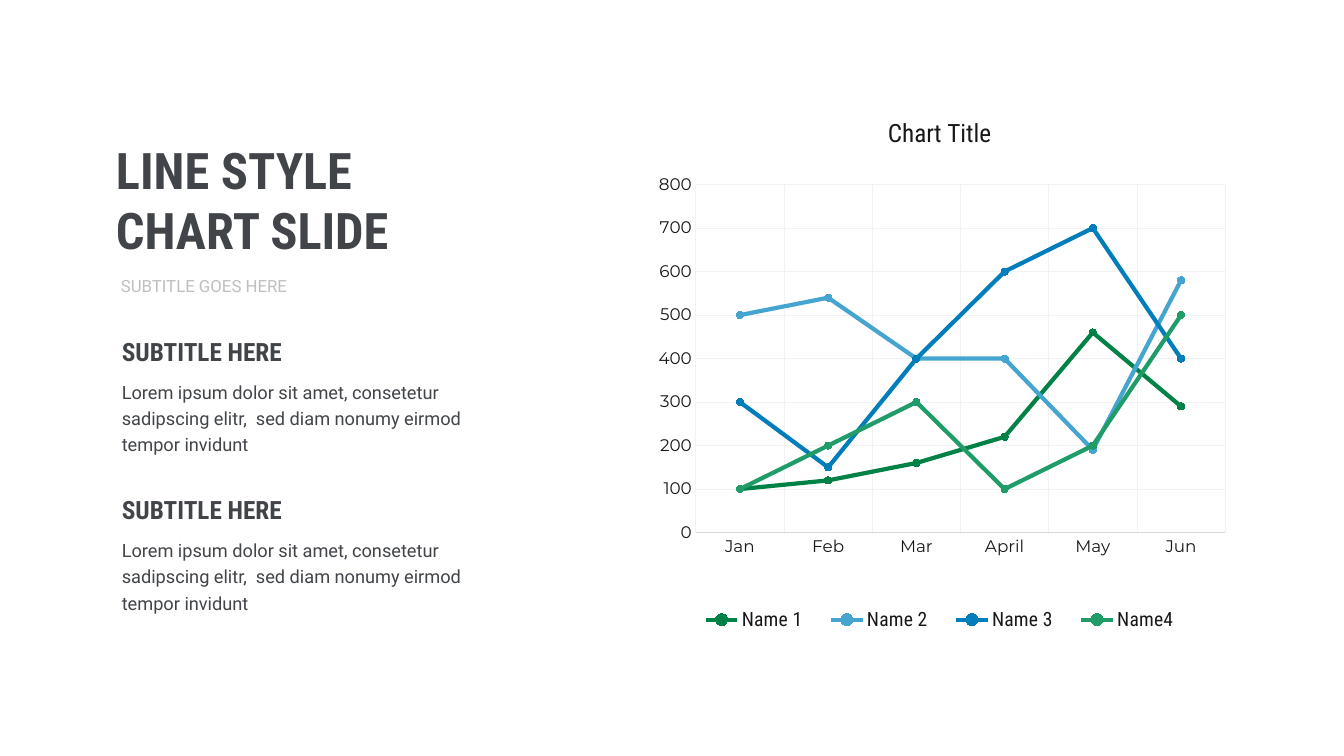
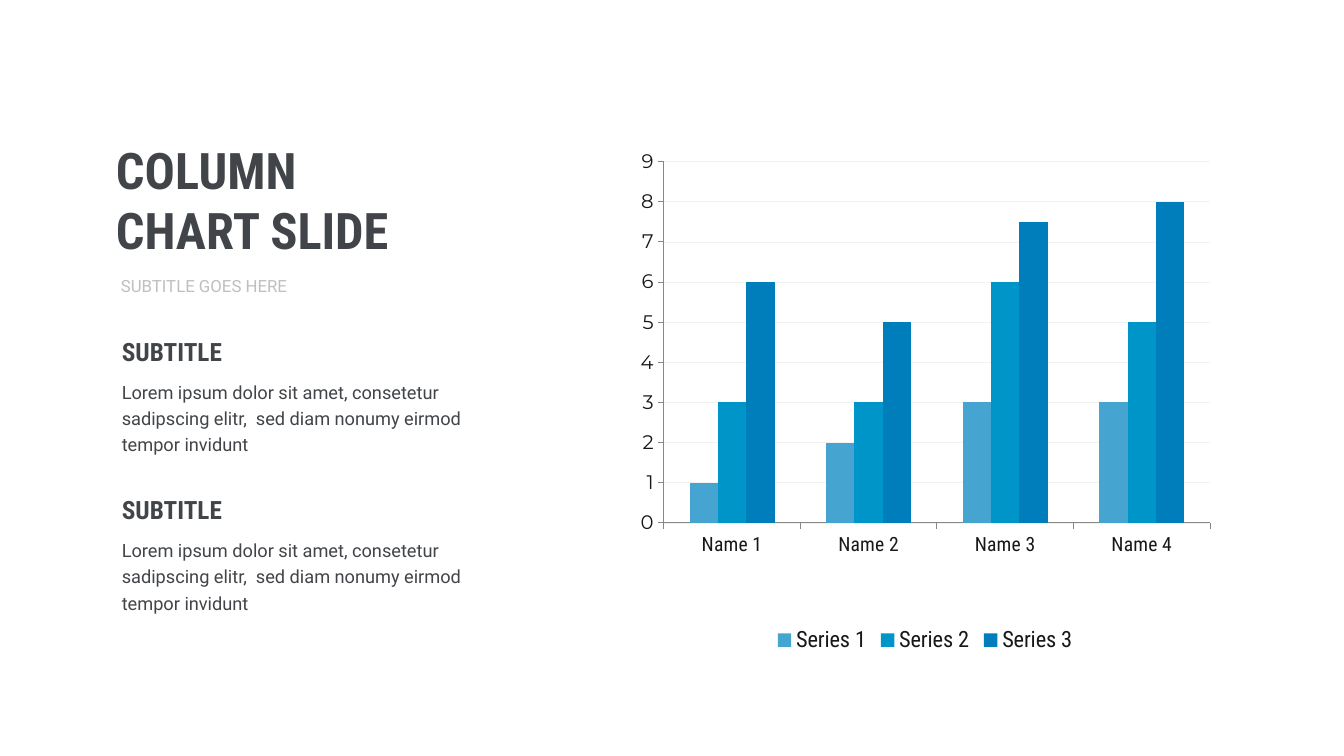
import pptx
import pptx.util
import pptx.chart.data
import pptx.dml.color
import pptx.enum.chart
import pptx.enum.text
import pptx.oxml
import pptx.oxml.ns

Inches = pptx.util.Inches
Pt = pptx.util.Pt
RGBColor = pptx.dml.color.RGBColor
ChartType = pptx.enum.chart.XL_CHART_TYPE
TickMark = pptx.enum.chart.XL_TICK_MARK

INK = RGBColor(0x41, 0x44, 0x48)
MUTED = RGBColor(0xBF, 0xBF, 0xBF)
CHART_TEXT = RGBColor(0x18, 0x18, 0x1A)
GRID = RGBColor(0xF2, 0xF2, 0xF2)
BASELINE = RGBColor(0xD9, 0xD9, 0xD9)
AXIS_GREY = RGBColor(0x87, 0x87, 0x87)
DARK_GREEN = RGBColor(0x00, 0x81, 0x45)
MARKER_DARK_GREEN = RGBColor(0x00, 0x85, 0x46)
GREEN = RGBColor(0x20, 0x9C, 0x68)
MARKER_GREEN = RGBColor(0x29, 0x97, 0x4F)
LIGHT_BLUE = RGBColor(0x46, 0xA5, 0xD0)
MID_BLUE = RGBColor(0x00, 0x95, 0xC9)
BLUE = RGBColor(0x00, 0x7D, 0xBB)

CONDENSED = "Roboto Condensed"
BODY = "Roboto"
NUMBERS = "Montserrat"
CHART_BASE = "Manrope"

LOREM = ("Lorem ipsum dolor sit amet, consetetur sadipscing elitr,  "
         "sed diam nonumy eirmod tempor invidunt")

LINE_SERIES = [
    ("Name 1", (100, 120, 160, 220, 460, 290), DARK_GREEN, MARKER_DARK_GREEN),
    ("Name 2", (500, 540, 400, 400, 190, 580), LIGHT_BLUE, MID_BLUE),
    ("Name 3", (300, 150, 400, 600, 700, 400), BLUE, BLUE),
    ("Name4", (100, 200, 300, 100, 200, 500), GREEN, MARKER_GREEN),
]
COLUMN_SERIES = [
    ("Series 1", (1, 2, 3, 3), LIGHT_BLUE),
    ("Series 2", (3, 3, 6, 5), MID_BLUE),
    ("Series 3", (6, 5, 7.5, 8), BLUE),
]


def style_font(font, name, size, color, bold=False):
    font.name = name
    font.size = Pt(size)
    font.color.rgb = color
    font.bold = bold


def fill_frame(frame, lines, name, size, color, bold=False, spacing=None):
    frame.word_wrap = True
    frame.auto_size = pptx.enum.text.MSO_AUTO_SIZE.SHAPE_TO_FIT_TEXT
    frame.vertical_anchor = pptx.enum.text.MSO_ANCHOR.TOP
    for index, line in enumerate(lines):
        paragraph = frame.add_paragraph() if index else frame.paragraphs[0]
        paragraph.alignment = pptx.enum.text.PP_ALIGN.LEFT
        if spacing:
            paragraph.line_spacing = spacing
        run = paragraph.add_run()
        run.text = line
        style_font(run.font, name, size, color, bold)


def add_text(slide, box, text, *style, **options):
    label = slide.shapes.add_textbox(*map(Inches, box))
    fill_frame(label.text_frame, [text], *style, **options)


def add_section(slide, left, top, heading):
    add_text(slide, (left, top, 3.32, 0.4), heading, CONDENSED, 18, INK, bold=True)
    add_text(slide, (left, top + 0.4, 4.09, 0.89), LOREM, BODY, 13, INK, spacing=1.2)


def add_text_column(slide, left, top, title_lines, heading):
    """Title, subtitle and two headed paragraphs, hung from one corner."""
    title = slide.shapes.title
    title.left, title.top = Inches(left), Inches(top)
    title.width, title.height = Inches(5.37), Inches(1.31)
    fill_frame(title.text_frame, title_lines, CONDENSED, 36, INK, bold=True)
    add_text(slide, (left + 0.05, top + 1.36, 1.91, 0.3),
             "SUBTITLE GOES HERE", BODY, 12, MUTED)
    for section in range(2):
        add_section(slide, left + 0.06, top + 1.96 + section * 1.57, heading)


def set_layout(element, index, box, inner=False):
    """Fix a chart part at fractions (x, y, w, h) of the chart."""
    for old in element.findall(pptx.oxml.ns.qn("c:layout")):
        element.remove(old)
    target = '<c:layoutTarget val="inner"/>' if inner else ""
    modes = "".join(f'<c:{key}Mode val="edge"/>' for key in "xy")
    sizes = "".join(f'<c:{key} val="{value}"/>' for key, value in zip("xywh", box))
    element.insert(index, pptx.oxml.parse_xml(
        f'<c:layout {pptx.oxml.ns.nsdecls("c")}><c:manualLayout>'
        f"{target}{modes}{sizes}</c:manualLayout></c:layout>"))


def style_axis(axis, font_name, size, tick, line_color, grid):
    axis.major_tick_mark = tick
    axis.minor_tick_mark = TickMark.NONE
    axis.tick_labels.number_format = "General"
    axis.tick_labels.number_format_is_linked = False
    style_font(axis.tick_labels.font, font_name, size, CHART_TEXT)
    if line_color is None:
        axis.format.line.fill.background()
    else:
        axis.format.line.color.rgb = line_color
        axis.format.line.width = Pt(0.75)
    axis.has_major_gridlines = grid
    if grid:
        axis.major_gridlines.format.line.color.rgb = GRID
        axis.major_gridlines.format.line.width = Pt(0.5)


def add_chart(slide, box, kind, categories, series, plot_box, base_size,
              legend_size, top_value, step):
    """Chart with the plot box, legend and value scale that both slides share."""
    data = pptx.chart.data.CategoryChartData()
    data.categories = categories
    for name, values, *_ in series:
        data.add_series(name, values)
    chart = slide.shapes.add_chart(kind, *map(Inches, box), data).chart
    style_font(chart.font, CHART_BASE, base_size, RGBColor(0, 0, 0))
    chart.has_title = False
    chart.has_legend = True
    chart.legend.position = pptx.enum.chart.XL_LEGEND_POSITION.BOTTOM
    chart.legend.include_in_layout = False
    style_font(chart.legend.font, CONDENSED, legend_size, CHART_TEXT)
    chart.plots[0].vary_by_categories = False
    scale = chart.value_axis
    scale.minimum_scale, scale.maximum_scale, scale.major_unit = 0, top_value, step
    plot_area = chart.element.find(".//" + pptx.oxml.ns.qn("c:plotArea"))
    set_layout(plot_area, 0, plot_box, inner=True)
    return chart


def add_line_chart(slide, box):
    chart = add_chart(slide, box, ChartType.LINE_MARKERS,
                      ("Jan", "Feb", "Mar", "April", "May", "Jun"), LINE_SERIES,
                      (0.09, 0.16, 0.89, 0.62), 10, 14, 800, 100)
    chart.has_title = True
    heading = chart.chart_title.text_frame.paragraphs[0].add_run()
    heading.text = "Chart Title"
    style_font(heading.font, CONDENSED, 18, CHART_TEXT)
    set_layout(chart.legend._element, 1, (0.07, 0.9, 0.86, 0.07))
    style_axis(chart.category_axis, NUMBERS, 12, TickMark.NONE, BASELINE, True)
    style_axis(chart.value_axis, NUMBERS, 12, TickMark.NONE, None, True)
    for series, (_, _, color, marker_color) in zip(chart.plots[0].series, LINE_SERIES):
        series.smooth = False
        series.format.line.color.rgb = color
        series.format.line.width = Pt(3)
        marker = series.marker
        marker.style = pptx.enum.chart.XL_MARKER_STYLE.CIRCLE
        marker.size = 5
        marker.format.fill.solid()
        marker.format.fill.fore_color.rgb = marker_color
        marker.format.line.color.rgb = marker_color


def add_column_chart(slide, box):
    chart = add_chart(slide, box, ChartType.COLUMN_CLUSTERED,
                      [f"Name {number}" for number in range(1, 5)], COLUMN_SERIES,
                      (0.06, 0.04, 0.92, 0.7), 14, 16, 9, 1)
    chart.plots[0].gap_width = 182
    chart.plots[0].overlap = 0
    style_axis(chart.category_axis, CONDENSED, 14, TickMark.OUTSIDE, AXIS_GREY, False)
    style_axis(chart.value_axis, NUMBERS, 14, TickMark.OUTSIDE, AXIS_GREY, True)
    for series, (_, _, color) in zip(chart.plots[0].series, COLUMN_SERIES):
        series.format.fill.solid()
        series.format.fill.fore_color.rgb = color


def add_chart_slide(deck, draw_chart, chart_box, title_lines, heading):
    slide = deck.slides.add_slide(deck.slide_layouts[5])
    draw_chart(slide, chart_box)
    add_text_column(slide, 1.05, 1.33, title_lines, heading)


def main():
    deck = pptx.Presentation()
    deck.slide_width, deck.slide_height = Inches(13.33), Inches(7.5)
    add_chart_slide(deck, add_line_chart, (6.37, 0.94, 5.9, 5.57),
                    ("LINE STYLE", "CHART SLIDE"), "SUBTITLE HERE")
    add_chart_slide(deck, add_column_chart, (6.23, 1.4, 5.89, 5.12),
                    ("COLUMN", "CHART SLIDE"), "SUBTITLE")
    deck.save("out.pptx")


if __name__ == "__main__":
    main()
